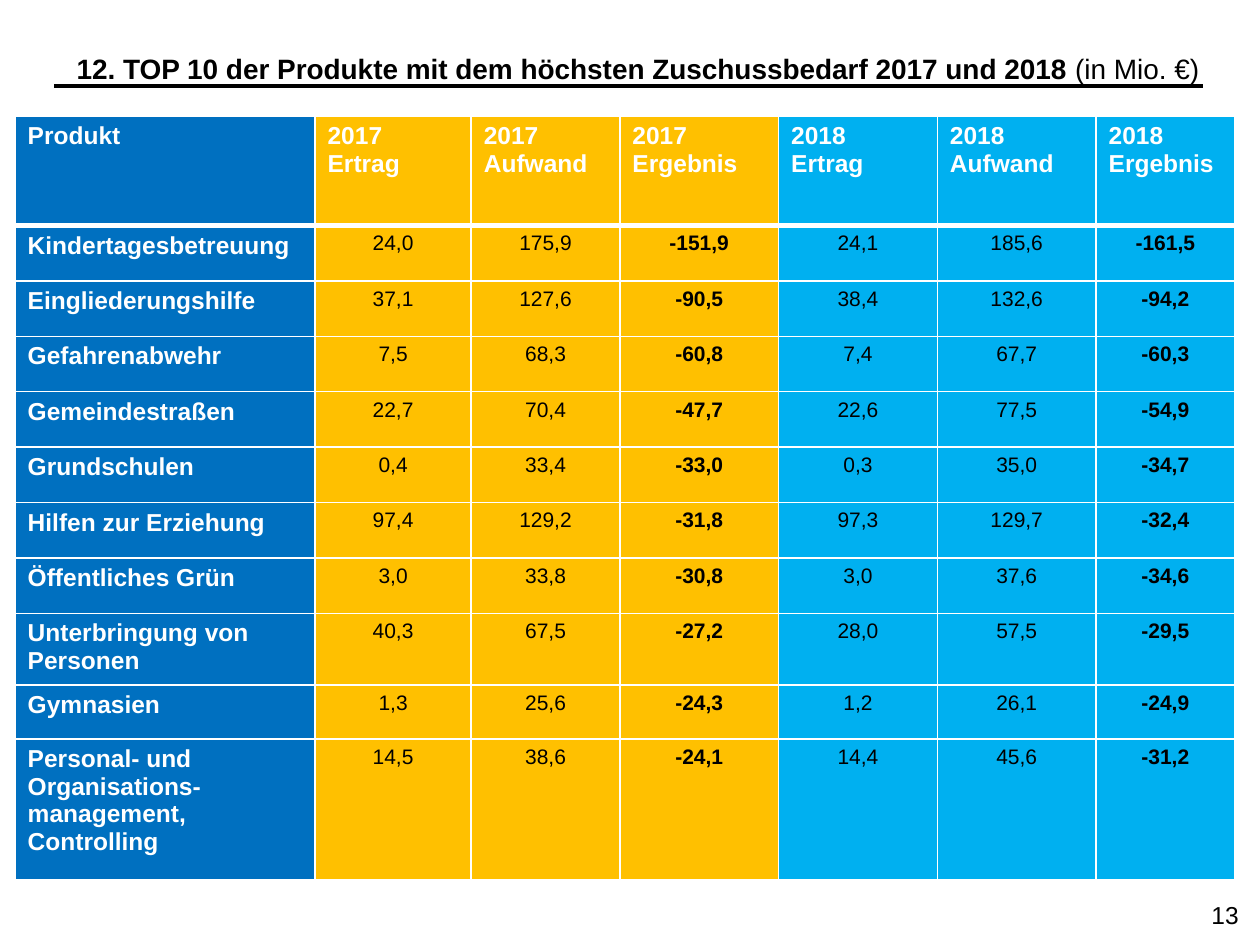
from lxml import etree
from pptx import Presentation
from pptx.dml.color import RGBColor
from pptx.enum import shapes, text
from pptx.oxml import ns
from pptx.util import Inches, Pt

BLACK, WHITE = "000000", "FFFFFF"
BLUE, AMBER, SKY = "0070C0", "FFC000", "00B0F0"
COLUMN_FILLS = [BLUE] + [AMBER] * 3 + [SKY] * 3
COLUMN_WIDTHS = [2.38, 1.24, 1.18, 1.26, 1.26, 1.26, 1.1]
ROW_HEIGHTS = [0.87] + [0.44] * 8 + [0.43, 1.12]
RESULT_COLUMNS = (3, 6)

HEADER = ["Produkt"] + [f"{year}\n{kind}" for year in (2017, 2018)
                        for kind in ("Ertrag", "Aufwand", "Ergebnis")]
PRODUCTS = [
    ("Kindertagesbetreuung", "24,0", "175,9", "-151,9", "24,1", "185,6", "-161,5"),
    ("Eingliederungshilfe", "37,1", "127,6", "-90,5", "38,4", "132,6", "-94,2"),
    ("Gefahrenabwehr", "7,5", "68,3", "-60,8", "7,4", "67,7", "-60,3"),
    ("Gemeindestraßen", "22,7", "70,4", "-47,7", "22,6", "77,5", "-54,9"),
    ("Grundschulen", "0,4", "33,4", "-33,0", "0,3", "35,0", "-34,7"),
    ("Hilfen zur Erziehung", "97,4", "129,2", "-31,8", "97,3", "129,7", "-32,4"),
    ("Öffentliches Grün", "3,0", "33,8", "-30,8", "3,0", "37,6", "-34,6"),
    ("Unterbringung von Personen", "40,3", "67,5", "-27,2", "28,0", "57,5", "-29,5"),
    ("Gymnasien", "1,3", "25,6", "-24,3", "1,2", "26,1", "-24,9"),
    ("Personal- und Organisations-management, Controlling",
     "14,5", "38,6", "-24,1", "14,4", "45,6", "-31,2"),
]


def rgb(value):
    return RGBColor.from_string(value)


def add_run(paragraph, words, size=14, color=BLACK, bold=False):
    run = paragraph.add_run()
    run.text = words
    run.font.name = "Arial"
    run.font.size = Pt(size)
    run.font.bold = bold
    run.font.color.rgb = rgb(color)


def write(frame, words, align=text.PP_ALIGN.LEFT, **style):
    """Fill a text frame, one paragraph per line of words."""
    for i, line in enumerate(words.split("\n")):
        paragraph = frame.add_paragraph() if i else frame.paragraphs[0]
        paragraph.alignment = align
        add_run(paragraph, line, **style)
    return paragraph


def add_text(slide, left, top, width, height, words, **style):
    box = slide.shapes.add_textbox(Inches(left), Inches(top), Inches(width), Inches(height))
    box.text_frame.word_wrap = True
    return write(box.text_frame, words, **style)


def add_rule(slide, left, right, y):
    rule = slide.shapes.add_connector(
        shapes.MSO_CONNECTOR.STRAIGHT, Inches(left), Inches(y), Inches(right), Inches(y))
    rule.line.color.rgb = rgb(BLACK)
    rule.line.width = Pt(2.25)
    etree.SubElement(rule._element.spPr, ns.qn("a:effectLst"))


def set_borders(cell, top=1, bottom=1):
    """Draw white borders; widths are in points."""
    properties = cell._tc.get_or_add_tcPr()
    widths = {"L": 1, "R": 1, "T": top, "B": bottom}
    for i, (side, width) in enumerate(widths.items()):
        border = etree.Element(ns.qn(f"a:ln{side}"), w=str(Pt(width)))
        fill = etree.SubElement(border, ns.qn("a:solidFill"))
        etree.SubElement(fill, ns.qn("a:srgbClr"), val=WHITE)
        properties.insert(i, border)


def add_product_table(slide, left, top):
    rows = [HEADER, *PRODUCTS]
    table = slide.shapes.add_table(
        len(rows), len(HEADER), Inches(left), Inches(top),
        Inches(sum(COLUMN_WIDTHS)), Inches(sum(ROW_HEIGHTS))).table
    for column, width in zip(table.columns, COLUMN_WIDTHS):
        column.width = Inches(width)
    for row, height in zip(table.rows, ROW_HEIGHTS):
        row.height = Inches(height)
    for r, row in enumerate(rows):
        for c, words in enumerate(row):
            cell = table.cell(r, c)
            cell.fill.solid()
            cell.fill.fore_color.rgb = rgb(COLUMN_FILLS[c])
            set_borders(cell, top=3 if r == 1 else 1, bottom=3 if r == 0 else 1)
            if r == 0 or c == 0:
                write(cell.text_frame, words, color=WHITE, bold=True)
            else:
                write(cell.text_frame, words, align=text.PP_ALIGN.CENTER,
                      size=12, bold=c in RESULT_COLUMNS)


def main():
    deck = Presentation()
    deck.slide_width, deck.slide_height = Inches(10), Inches(7.5)
    slide = deck.slides.add_slide(deck.slide_layouts[6])
    add_rule(slide, 0.43, 9.55, 0.68)
    add_text(slide, 7.6, 7.09, 2.33, 0.41, "13", align=text.PP_ALIGN.RIGHT)
    add_product_table(slide, 0.12, 0.92)
    title = add_text(
        slide, 0.51, 0.36, 9.37, 0.64,
        "12. TOP 10 der Produkte mit dem höchsten Zuschussbedarf 2017 und 2018 ",
        size=16, bold=True)
    add_run(title, "(in Mio. €)", size=16)
    deck.save("out.pptx")


if __name__ == "__main__":
    main()
